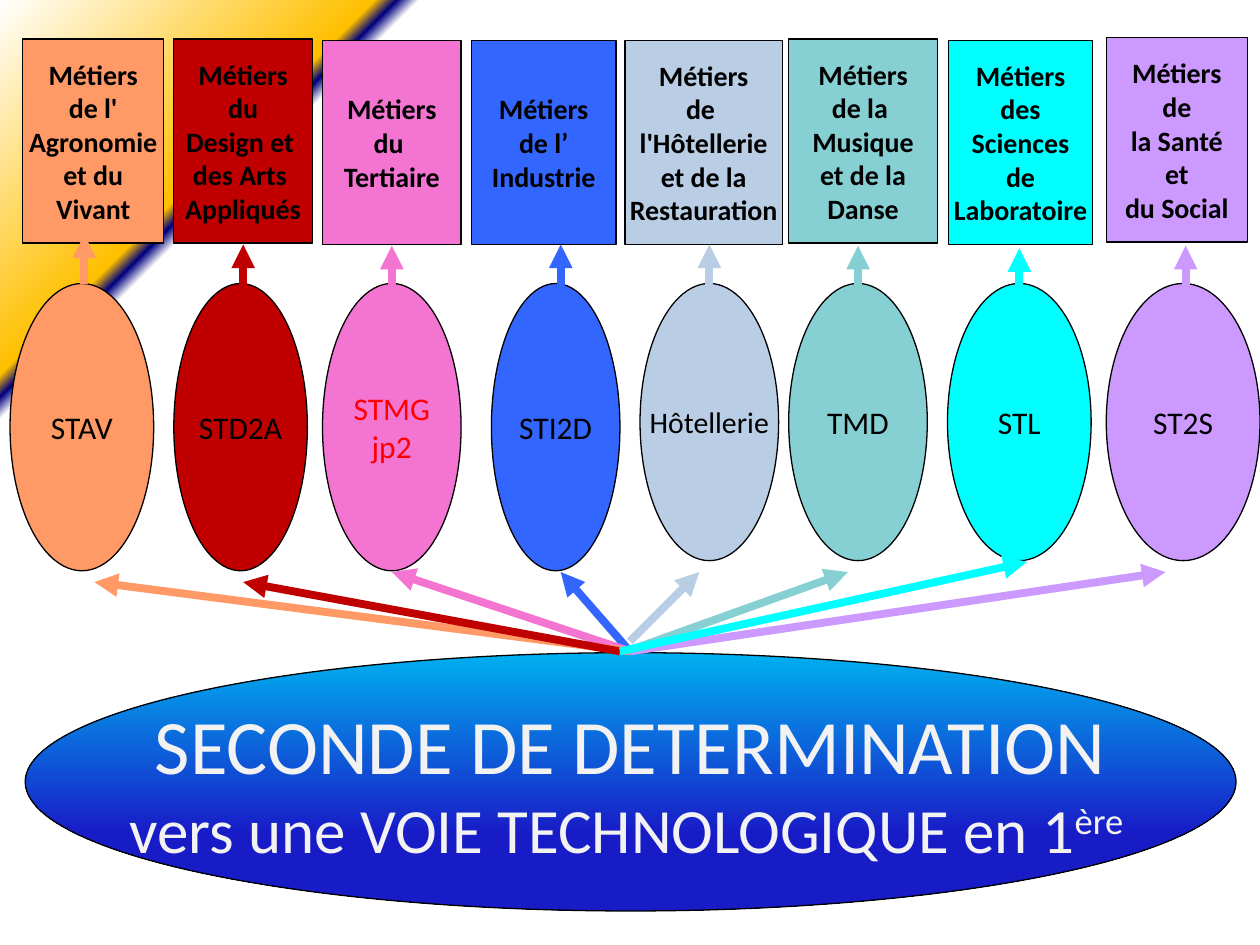
"""Build the slide on the technological streams open after Seconde."""
from lxml import etree
from pptx import Presentation
from pptx.dml.color import RGBColor
from pptx.enum import shapes, text
from pptx.oxml import ns
from pptx.util import Inches, Pt

INK = {
    "black": "000000", "pale": "F2F2F2", "red": "FF0000", "white": "FFFFFF",
    "gold": "FFC000", "navy": "000082", "sky": "00B0F0", "deep": "181CC7",
    "blue": "3366FF", "pink": "F474D2", "orange": "FF9966", "teal": "86D0D4",
    "violet": "CC99FF", "crimson": "C00000", "steel": "B9CDE5", "cyan": "00FFFF",
}
BACK = [(0, "white"), (81, "white"), (82, "navy"), (83, "gold"), (100, "white")]
DOME = [(0, "sky"), (70, "deep")]

# colour, stream, trades, oval (left, width, height), card (left, top, width),
# fan (x1, y1, x2, y2), rise (x, y1, y2)
STREAMS = [
    ("blue", "STI2D", "Métiers\nde l’\nIndustrie",
     (3.9, 1.02, 2.28), (3.74, 0.32, 1.15), (5, 5.17, 4.45, 4.54), (4.45, 2.33, 1.94)),
    ("pink", "STMG\njp2", "Métiers\ndu \nTertiaire",
     (2.56, 1.1, 2.28), (2.56, 0.32, 1.1), (5, 5.17, 3.11, 4.54), (3.11, 2.27, 1.95)),
    ("orange", "STAV", "Métiers\nde l'\nAgronomie\net du\nVivant",
     (0.08, 1.14, 2.28), (0.18, 0.31, 1.12), (5, 5.17, 0.75, 4.62), (0.67, 2.25, 1.86)),
    ("teal", "TMD", "Métiers\nde la \nMusique\net de la\nDanse",
     (6.26, 1.1, 2.2), (6.26, 0.31, 1.18), (5, 5.16, 6.73, 4.54), (6.81, 2.34, 1.95)),
    ("violet", "ST2S", "Métiers\nde\nla Santé\net\ndu Social",
     (8.78, 1.22, 2.2), (8.78, 0.3, 1.12), (5, 5.17, 9.25, 4.54), (9.41, 2.34, 1.95)),
    ("crimson", "STD2A", "Métiers\ndu\nDesign et \ndes Arts \nAppliqués",
     (1.38, 1.06, 2.28), (1.38, 0.31, 1.1), (4.92, 5.17, 1.93, 4.62), (1.93, 2.33, 1.94)),
    ("steel", "Hôtellerie", "Métiers\nde \nl'Hôtellerie\net de la\nRestauration",
     (5.08, 1.1, 2.2), (4.96, 0.32, 1.25), (5, 5.09, 5.55, 4.54), (5.63, 2.33, 1.94)),
    ("cyan", "STL", "Métiers\ndes\nSciences\nde\nLaboratoire",
     (7.52, 1.14, 2.2), (7.53, 0.32, 1.14), (4.92, 5.17, 8.15, 4.46), (8.09, 2.36, 1.97)),
]
OVAL_TOP, CARD_TALL = 2.25, 1.62
ODD = {"STMG\njp2": {"ink": "red"}, "Hôtellerie": {"size": 17}}


def hue(name):
    return RGBColor.from_string(INK[name])


def blend(host, fill, stops, angle):
    fill.gradient()
    fill.gradient_angle = angle
    ramp = host.element.xpath(".//a:gradFill/a:gsLst")[0]
    for old in list(ramp):
        ramp.remove(old)
    for spot, name in stops:
        stop = etree.SubElement(ramp, ns.qn("a:gs"), pos=str(spot * 1000))
        etree.SubElement(stop, ns.qn("a:srgbClr"), val=INK[name])


def write(shape, words, size=18, ink="black", bold=False, lift=0, join=False):
    frame = shape.text_frame
    for line in words.split("\n"):
        para = frame.paragraphs[-1]
        if para.runs and not join:
            para = frame.add_paragraph()
        para.alignment = text.PP_ALIGN.CENTER
        run = para.add_run()
        run.text = line
        font = run.font
        font.name, font.size, font.bold = "Calibri", Pt(size), bold
        font.color.rgb = hue(ink)
        if lift:
            run._r.get_or_add_rPr().set("baseline", str(lift * 1000))


def block(slide, kind, *place, fill=None):
    shape = slide.shapes.add_shape(kind, *map(Inches, place))
    shape.shadow.inherit = False
    shape.line.color.rgb = hue("black")
    shape.line.width = Pt(0.75)
    if fill:
        shape.fill.solid()
        shape.fill.fore_color.rgb = hue(fill)
    shape.text_frame.word_wrap = False
    shape.text_frame.vertical_anchor = text.MSO_ANCHOR.MIDDLE
    return shape


def arrow(slide, ink, *ends):
    link = slide.shapes.add_connector(
        shapes.MSO_CONNECTOR.STRAIGHT, *map(Inches, ends))
    link.line.color.rgb = hue(ink)
    link.line.width = Pt(4.5)
    props = link.element.spPr
    etree.SubElement(props.find(ns.qn("a:ln")), ns.qn("a:tailEnd"), type="triangle")
    etree.SubElement(props, ns.qn("a:effectLst"))


def main():
    deck = Presentation()
    deck.slide_width, deck.slide_height = Inches(10), Inches(7.5)
    slide = deck.slides.add_slide(deck.slide_layouts[6])
    blend(slide, slide.background.fill, BACK, 135)
    oval, card = shapes.MSO_SHAPE.OVAL, shapes.MSO_SHAPE.RECTANGLE

    dome = block(slide, oval, 0.2, 5.18, 9.61, 2.05)
    blend(dome, dome.fill, DOME, 270)
    write(dome, "SECONDE DE DETERMINATION", size=44, ink="pale")
    write(dome, "vers une VOIE TECHNOLOGIQUE en 1", size=36, ink="pale")
    write(dome, "ère ", size=36, ink="pale", lift=30, join=True)

    for ink, name, trades, (left, wide, tall), (x, y, w), _, _ in STREAMS:
        write(block(slide, oval, left, OVAL_TOP, wide, tall, fill=ink),
              name, **ODD.get(name, {}))
        write(block(slide, card, x, y, w, CARD_TALL, fill=ink),
              trades, size=16, bold=True)
    for ink, *_, fan, (x, low, high) in STREAMS:
        arrow(slide, ink, *fan)
        arrow(slide, ink, x, low, x, high)
    deck.save("out.pptx")


if __name__ == "__main__":
    main()
